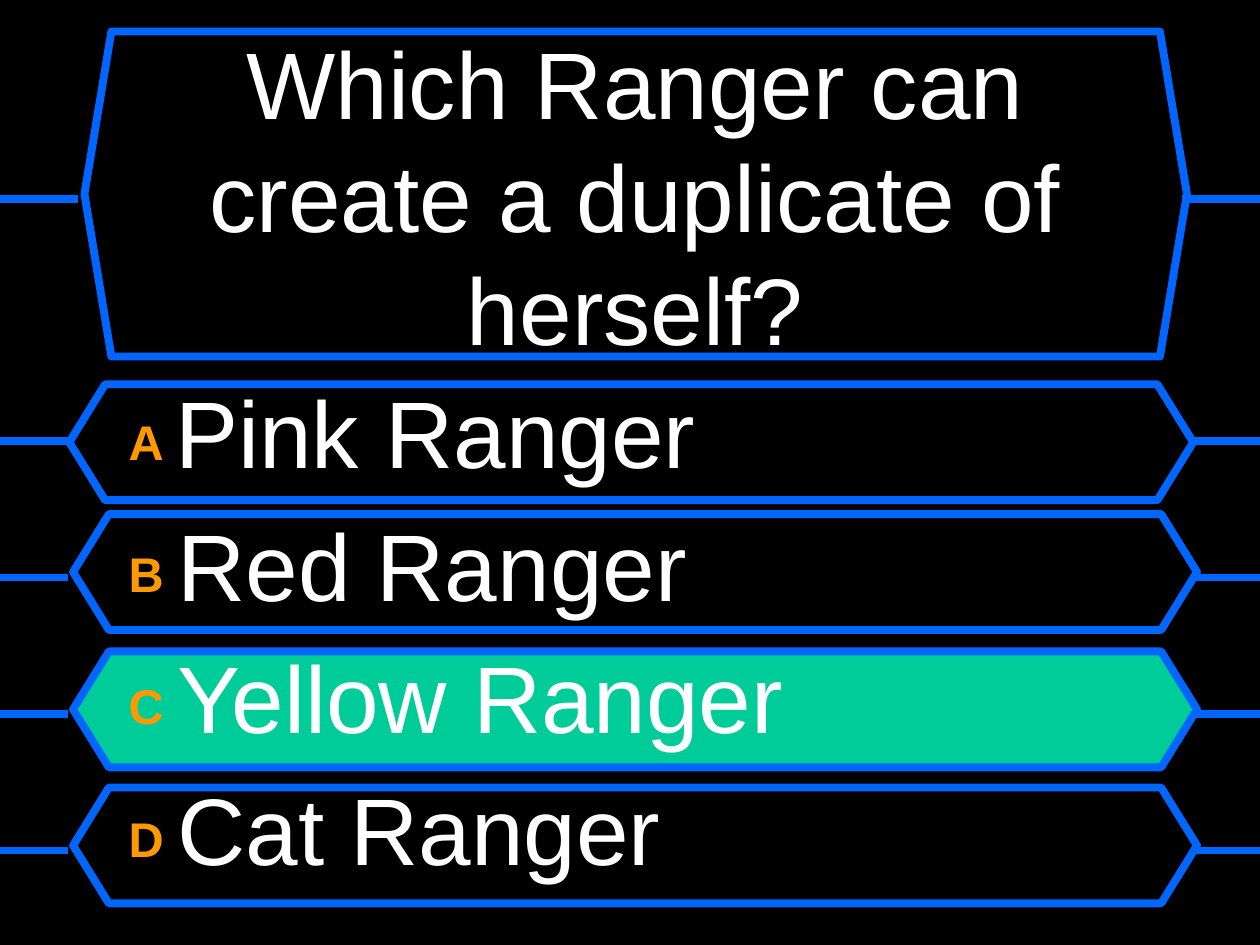
import pptx
import pptx.util
import pptx.dml.color
import pptx.enum.shapes
import pptx.enum.text
import pptx.oxml.ns
import lxml.etree
from pptx.util import Inches

QUESTION = "Which Ranger can create a duplicate of herself?"
# letter, answer, frame left, frame top, frame fill
ANSWERS = [
    ("A", "Pink Ranger", 0.55, 3.05, "000000"),
    ("B", "Red Ranger", 0.58, 4.08, "000000"),
    ("C", "Yellow Ranger", 0.58, 5.17, "00CC99"),
    ("D", "Cat Ranger", 0.58, 6.25, "000000"),
]
BLUE, WHITE, ORANGE, BLACK = "0066FF", "FFFFFF", "FF9900", "000000"
WIDTH = 10
FIRST_WIRE, WIRE_STEP = 3.5, 3.25 / 3


def color(value):
    return pptx.dml.color.RGBColor.from_string(value)


def add_run(p, text, size, fill, bold=False, baseline=0):
    r = p.add_run()
    r.text = text
    r.font.name = "Arial"
    r.font.size = pptx.util.Pt(size)
    r.font.bold = bold
    r.font.color.rgb = color(fill)
    if baseline:
        r.font._element.set("baseline", str(baseline * 1000))


def set_line(sp):
    sp.line.color.rgb = color(BLUE)
    sp.line.width = pptx.util.Pt(4.5)


def add_frame(s, left, top, width, height, fill, adj):
    sp = s.shapes.add_shape(pptx.enum.shapes.MSO_SHAPE.HEXAGON, Inches(left),
                            Inches(top), Inches(width), Inches(height))
    sp.adjustments[0] = adj
    sp.shadow.inherit = False
    sp.fill.solid()
    sp.fill.fore_color.rgb = color(fill)
    set_line(sp)


def add_wires(s, y, inset):
    """Join both slide edges to a frame that starts inset from them."""
    for start, end in ((inset, 0), (WIDTH, WIDTH - inset)):
        wire = s.shapes.add_connector(pptx.enum.shapes.MSO_CONNECTOR.STRAIGHT,
                                      Inches(start), Inches(y), Inches(end), Inches(y))
        set_line(wire)
        lxml.etree.SubElement(wire._element.spPr, pptx.oxml.ns.qn("a:effectLst"))


def place(s, sp, left, top, width, height, anchor):
    """Position a placeholder and bring it in front of the frames."""
    sp.left, sp.top = Inches(left), Inches(top)
    sp.width, sp.height = Inches(width), Inches(height)
    s.shapes._spTree.append(sp._element)
    tf = sp.text_frame
    tf.word_wrap = True
    tf.auto_size = pptx.enum.text.MSO_AUTO_SIZE.NONE
    tf.vertical_anchor = anchor
    return tf


def format_answer(p):
    """Hanging indent, no bullet, 20% space before."""
    pPr = p._p.get_or_add_pPr()
    pPr.set("marL", str(Inches(0.38)))
    pPr.set("indent", str(-Inches(0.38)))
    before = lxml.etree.SubElement(pPr, pptx.oxml.ns.qn("a:spcBef"))
    lxml.etree.SubElement(before, pptx.oxml.ns.qn("a:spcPct")).set("val", "20000")
    lxml.etree.SubElement(pPr, pptx.oxml.ns.qn("a:buNone"))


def main():
    prs = pptx.Presentation()
    prs.slide_width, prs.slide_height = Inches(WIDTH), Inches(7.5)
    s = prs.slides.add_slide(prs.slide_layouts[1])
    s.background.fill.solid()
    s.background.fill.fore_color.rgb = color(BLACK)

    add_frame(s, 0.67, 0.25, 8.75, 2.58, BLACK, 0.083)
    for letter, answer, left, top, fill in ANSWERS:
        add_frame(s, left, top, 8.92, 0.92, fill, 0.309)

    anchors = pptx.enum.text.MSO_ANCHOR
    tf = place(s, s.shapes.title, 0.83, 0.42, 8.42, 2.25, anchors.MIDDLE)
    p = tf.paragraphs[0]
    p.alignment = pptx.enum.text.PP_ALIGN.CENTER
    add_run(p, QUESTION, 54, WHITE)

    tf = place(s, s.placeholders[1], 0.92, 2.92, 8.33, 4.33, anchors.TOP)
    for i, (letter, answer, *frame) in enumerate(ANSWERS):
        p = tf.add_paragraph() if i else tf.paragraphs[0]
        format_answer(p)
        add_run(p, letter + " ", 48, ORANGE, bold=True, baseline=10)
        add_run(p, answer, 54, WHITE)

    add_wires(s, 1.58, 0.62)
    for i in range(len(ANSWERS)):
        add_wires(s, FIRST_WIRE + i * WIRE_STEP, 0.54)

    prs.save("out.pptx")


if __name__ == "__main__":
    main()
